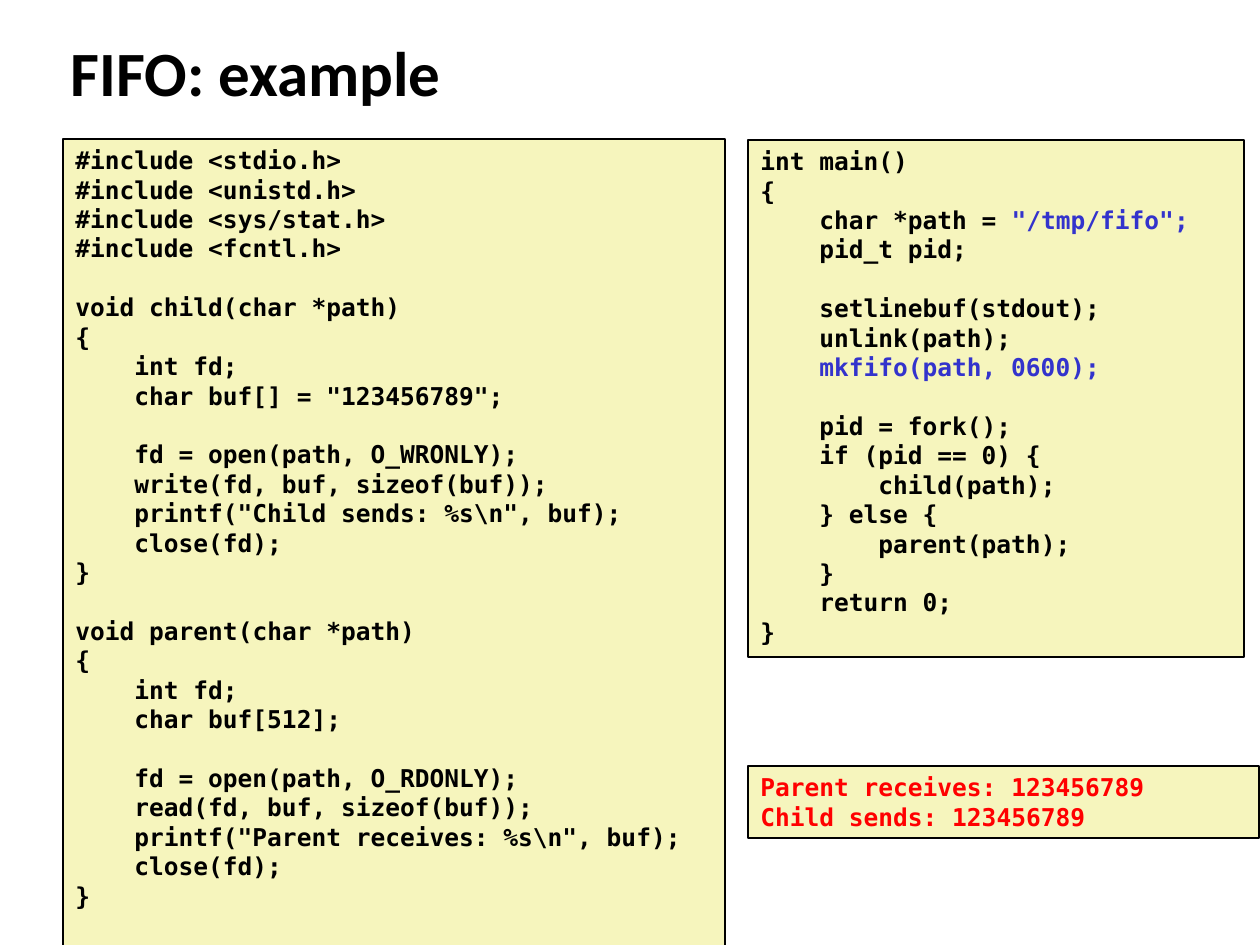
import pptx
import pptx.util
import pptx.dml.color
import pptx.enum.shapes
import pptx.enum.text

BLACK = pptx.dml.color.RGBColor(0x00, 0x00, 0x00)
BLUE = pptx.dml.color.RGBColor(0x33, 0x33, 0xCC)
RED = pptx.dml.color.RGBColor(0xFF, 0x00, 0x00)
CREAM = pptx.dml.color.RGBColor(0xF6, 0xF5, 0xBD)
PX = 914400 // 126
INDENT = 59
LINE_PITCH = pptx.util.Pt(16.8)

FUNCTIONS = r'''#include <stdio.h>
#include <unistd.h>
#include <sys/stat.h>
#include <fcntl.h>

void child(char *path)
{
    int fd;
    char buf[] = "123456789";

    fd = open(path, O_WRONLY);
    write(fd, buf, sizeof(buf));
    printf("Child sends: %s\n", buf);
    close(fd);
}

void parent(char *path)
{
    int fd;
    char buf[512];

    fd = open(path, O_RDONLY);
    read(fd, buf, sizeof(buf));
    printf("Parent receives: %s\n", buf);
    close(fd);
}'''

MAIN = '''int main()
{
    char *path = "/tmp/fifo";
    pid_t pid;

    setlinebuf(stdout);
    unlink(path);
    mkfifo(path, 0600);

    pid = fork();
    if (pid == 0) {
        child(path);
    } else {
        parent(path);
    }
    return 0;
}'''

OUTPUT = '''Parent receives: 123456789
Child sends: 123456789'''

HIGHLIGHTS = ['"/tmp/fifo";', "mkfifo(path, 0600);"]


def add_run(paragraph, text, font_name, size, color):
    run = paragraph.add_run()
    run.text = text
    run.font.name = font_name
    run.font.size = pptx.util.Pt(size)
    run.font.bold = True
    run.font.color.rgb = color


presentation = pptx.Presentation()
presentation.slide_width = 1260 * PX
presentation.slide_height = 945 * PX
slide = presentation.slides.add_slide(presentation.slide_layouts[5])

title = slide.shapes.title
title.left, title.top, title.width, title.height = 58 * PX, 32 * PX, 1134 * PX, 79 * PX
title.text_frame.vertical_anchor = pptx.enum.text.MSO_ANCHOR.MIDDLE
title.text_frame.paragraphs[0].alignment = pptx.enum.text.PP_ALIGN.LEFT
add_run(title.text_frame.paragraphs[0], "FIFO: example", "Calibri", 36, BLACK)

boxes = [
    (63, 139, 662, 814, FUNCTIONS, BLACK),
    (748, 140, 496, 517, MAIN, BLACK),
    (748, 766, 511, 72, OUTPUT, RED),
]
for left, top, width, height, code, color in boxes:
    box = slide.shapes.add_shape(
        pptx.enum.shapes.MSO_SHAPE.RECTANGLE, left * PX, top * PX, width * PX, height * PX
    )
    box.shadow.inherit = False
    box.fill.solid()
    box.fill.fore_color.rgb = CREAM
    box.line.color.rgb = BLACK
    box.line.width = pptx.util.Pt(1)
    frame = box.text_frame
    frame.word_wrap = True
    frame.vertical_anchor = pptx.enum.text.MSO_ANCHOR.TOP

    paragraph = frame.paragraphs[0]
    after_gap = False
    for number, line in enumerate(code.split("\n")):
        text = line.lstrip()
        if not text:
            after_gap = True
            continue
        if number:
            paragraph = frame.add_paragraph()
        paragraph.alignment = pptx.enum.text.PP_ALIGN.LEFT
        paragraph.line_spacing = LINE_PITCH
        paragraph.space_before = LINE_PITCH if after_gap else 0
        after_gap = False
        depth = (len(line) - len(text)) // 4
        properties = paragraph._p.get_or_add_pPr()
        properties.set("marL", str(depth * INDENT * PX))
        properties.set("indent", "0")

        highlight = next((part for part in HIGHLIGHTS if text.endswith(part)), "")
        plain = text.removesuffix(highlight)
        for part, part_color in ((plain, color), (highlight, BLUE)):
            if part:
                add_run(paragraph, part, "DejaVu Sans Mono", 14, part_color)

presentation.save("out.pptx")
